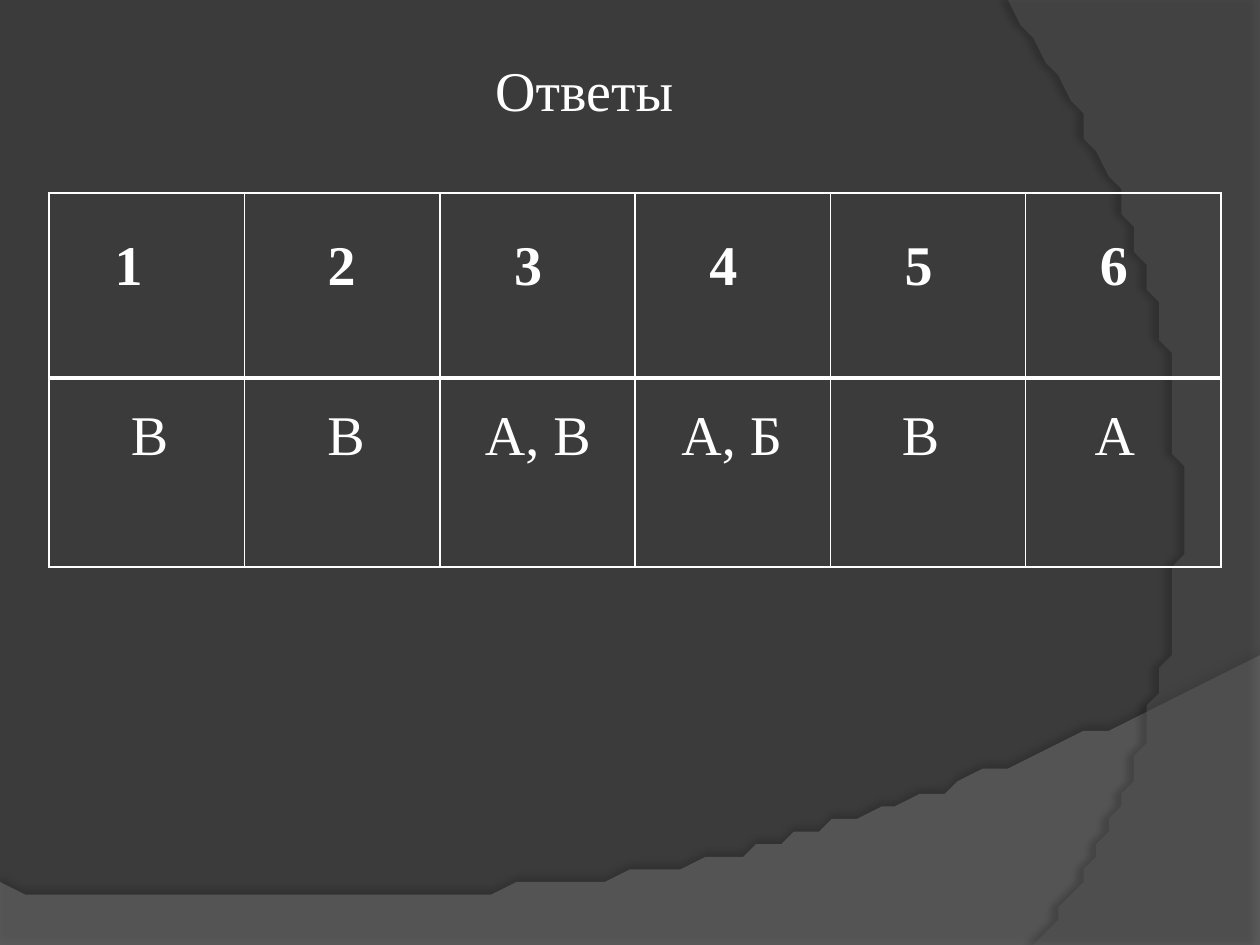
from lxml.etree import SubElement
from pptx import Presentation
from pptx.dml.color import RGBColor
from pptx.enum.text import MSO_AUTO_SIZE as AutoSize, MSO_ANCHOR as Anchor, PP_ALIGN as Align
from pptx.oxml.ns import qn
from pptx.util import Inches, Pt

COLORS = {"page": "3B3B3B", "white": "FFFFFF", "shadow": "000000",
          "low_wave": "7F7F7F", "side_wave": "5E5E5E"}
FONT, SIZE = "Times New Roman", 32
UNIT = Inches(0.1)
COLUMN, TABLE_LEFT, TABLE_TOP = 15.5, 3.9, 15.3
ROWS = (14.7, 15)
SPACE = 0.7


def curve(start, first, second, end, steps=60):
    points = []
    for step in range(steps + 1):
        t = step / steps
        weights = ((1 - t) ** 3, 3 * t * (1 - t) ** 2, 3 * t * t * (1 - t), t ** 3)
        points.append(tuple(sum(w * p[axis] for w, p in zip(weights, (start, first, second, end)))
                            for axis in (0, 1)))
    return points


def add_color(parent, name, opacity=100):
    fill = SubElement(parent, qn("a:srgbClr"), val=COLORS[name])
    SubElement(fill, qn("a:alpha"), val=str(opacity * 1000))


class Sheet:
    """Draws styled elements on a slide measured as 100 columns by 75 rows."""

    def __init__(self, deck):
        self.page = deck.slides.add_slide(deck.slide_layouts[5])
        self.page.background.fill.solid()
        self.page.background.fill.fore_color.rgb = RGBColor.from_string(COLORS["page"])

    def units(self, *values):
        return [round(value * UNIT) for value in values]

    def style(self, para, bold=False):
        para.alignment = Align.LEFT
        para.font.name, para.font.size, para.font.bold = FONT, Pt(SIZE), bold
        para.font.color.rgb = RGBColor.from_string(COLORS["white"])

    def fill_box(self, box, text, left, top, width, height):
        box.left, box.top, box.width, box.height = self.units(left, top, width, height)
        frame = box.text_frame
        frame.text = text
        frame.word_wrap, frame.auto_size = False, AutoSize.SHAPE_TO_FIT_TEXT
        frame.vertical_anchor = Anchor.TOP
        self.style(frame.paragraphs[0])

    def title(self, text, *place):
        box = self.page.shapes.title
        self.fill_box(box, text, *place)
        self.page.shapes._spTree.append(box._element)

    def label(self, text, *place):
        self.fill_box(self.page.shapes.add_textbox(0, 0, 0, 0), text, *place)

    def wave(self, points, color, opacity, shadow_opacity, distance, angle):
        builder = self.page.shapes.build_freeform(*points[0], scale=UNIT)
        builder.add_line_segments(points[1:], close=True)
        shape = builder.convert_to_shape()
        shape.fill.solid()
        shape.fill.fore_color.rgb = RGBColor.from_string(COLORS[color])
        tint = shape._element.spPr.find(qn("a:solidFill"))[0]
        SubElement(tint, qn("a:alpha"), val=str(opacity * 1000))
        shape.line.fill.background()
        shape.shadow.inherit = False
        effects = shape._element.spPr.find(qn("a:effectLst"))
        shadow = SubElement(effects, qn("a:outerShdw"), blurRad=str(Pt(4)),
                            dist=str(Pt(distance)), dir=str(angle * 60000),
                            algn="ctr", rotWithShape="0")
        add_color(shadow, "shadow", shadow_opacity)

    def border(self, cell, **widths):
        properties = cell._tc.get_or_add_tcPr()
        for side in "LRTB":
            line = SubElement(properties, qn(f"a:ln{side}"), w=str(Pt(widths.get(side, 1))))
            add_color(SubElement(line, qn("a:solidFill")), "white")
        cell.fill.background()

    def table(self, numbers, spaces):
        place = self.units(TABLE_LEFT, TABLE_TOP, COLUMN * len(numbers), sum(ROWS))
        table = self.page.shapes.add_table(len(ROWS), len(numbers), *place).table
        table.first_row = table.horz_banding = False
        for row, height in zip(table.rows, ROWS):
            row.height = self.units(height)[0]
        for index, (number, count) in enumerate(zip(numbers, spaces)):
            table.columns[index].width = self.units(COLUMN)[0]
            head, body = table.cell(0, index), table.cell(1, index)
            self.border(head, B=3)
            self.border(body, T=3)
            head.text = number
            head.margin_left, head.margin_top = self.units(1 + count * SPACE, 3.4)
            self.style(head.text_frame.paragraphs[0], bold=True)


def main():
    deck = Presentation()
    deck.slide_width, deck.slide_height = Inches(10), Inches(7.5)
    sheet = Sheet(deck)
    sheet.wave([(0, 75), (100, 75)] + curve((100, 52), (55.9, 72.9), (39.1, 71.9), (0, 70.5)),
               "low_wave", 45, 35, 3.5, 270)
    sheet.wave([(100, 0.2), (100, 75)] + curve((82.1, 75), (93.5, 61.9), (101.8, 30), (80, 0)),
               "side_wave", 40, 45, 4, 180)
    sheet.title("Ответы", 38.3, 3.9, 16.3, 6.4)
    sheet.table("123456", (6, 8, 7, 7, 7, 7))
    answers = [("В", 9.4, 5), ("В", 25, 5), ("А, В", 37.5, 10.5),
               ("А, Б", 53.1, 10.1), ("В", 70.6, 5), ("А", 85.9, 5.3)]
    for text, left, width in answers:
        sheet.label(text, left, 31.2, width, 6.4)
    deck.save("out.pptx")


if __name__ == "__main__":
    main()
